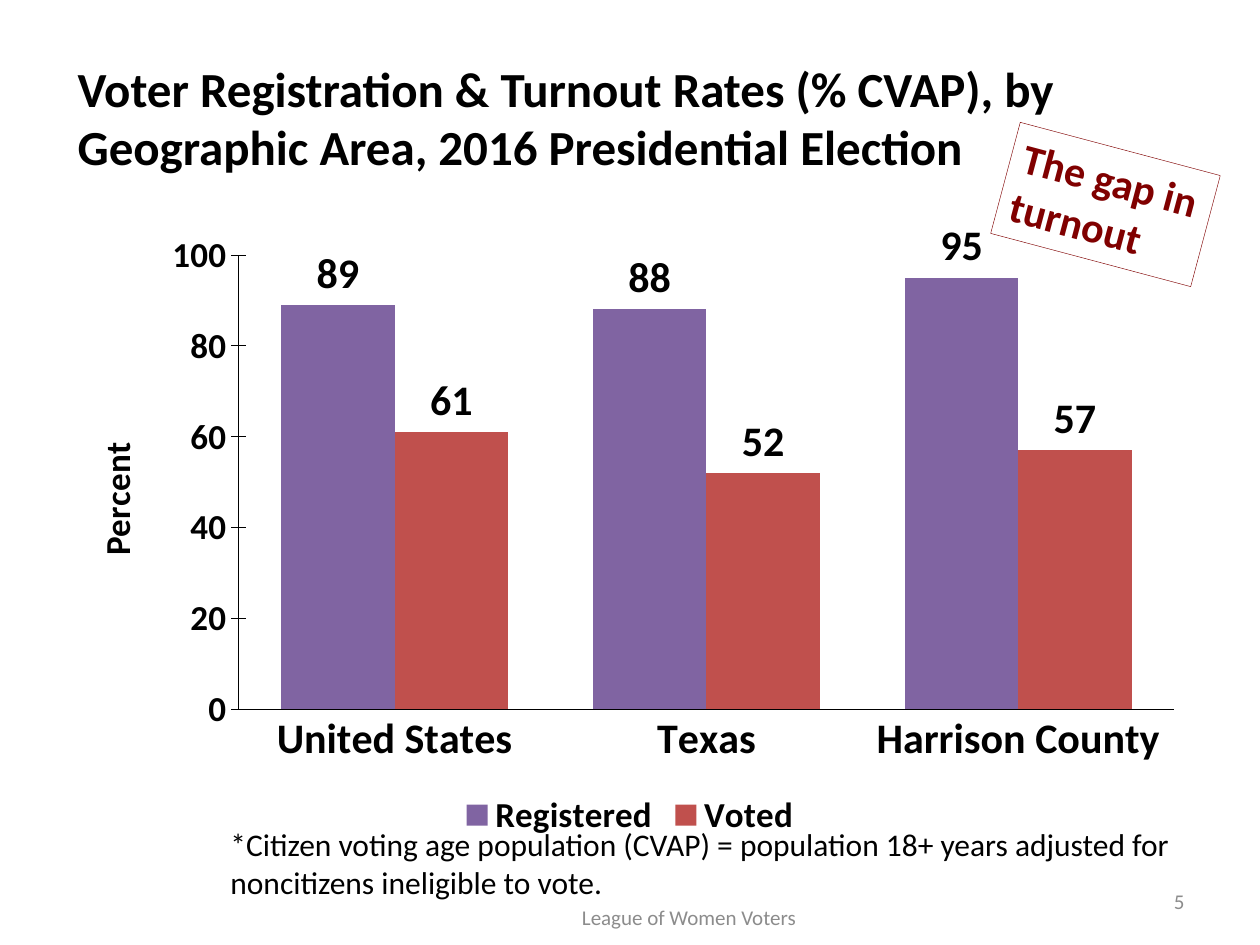
"""Builds a slide on voter registration and turnout rates."""
import dataclasses

import pptx
import pptx.chart.data
import pptx.dml.color
import pptx.enum.chart
import pptx.enum.shapes
import pptx.enum.text
import pptx.oxml
import pptx.oxml.ns
import pptx.util

RGBColor = pptx.dml.color.RGBColor
Align = pptx.enum.text.PP_ALIGN
Anchor = pptx.enum.text.MSO_ANCHOR
Pt = pptx.util.Pt

PX = 914400 / 126
FONT = "Calibri"
BLACK = RGBColor(0, 0, 0)
GREY = RGBColor(0x8C, 0x8C, 0x8C)
MAROON = RGBColor(0x80, 0, 0)
PURPLE = RGBColor(0x80, 0x64, 0xA2)
RED = RGBColor(0xC0, 0x50, 0x4D)


@dataclasses.dataclass
class Box:
    left: int
    top: int
    width: int
    height: int

    def emu(self) -> list[int]:
        return [round(v * PX) for v in dataclasses.astuple(self)]


@dataclasses.dataclass
class Label:
    box: Box
    lines: list[str]
    size: int
    color: RGBColor
    align: Align = Align.LEFT
    anchor: Anchor = Anchor.TOP
    bold: bool = False
    wrap: bool = True


@dataclasses.dataclass
class Series:
    name: str
    values: list[int]
    color: RGBColor


TITLE = Label(
    Box(65, 38, 1131, 158),
    ["Voter Registration & Turnout Rates (% CVAP), by Geographic Area, 2016 Presidential Election"],
    28, BLACK, anchor=Anchor.MIDDLE, bold=True)
CALLOUT = Label(Box(1002, 147, 207, 115), ["The gap in", "turnout"], 24, MAROON,
                bold=True, wrap=False)
LABELS = [
    Label(Box(903, 876, 294, 50), ["5"], 12, GREY, Align.RIGHT, Anchor.MIDDLE),
    Label(Box(464, 892, 450, 50), ["League of Women Voters"], 12, GREY,
          Align.CENTER, Anchor.MIDDLE),
    Label(Box(218, 819, 980, 89),
          ["*Citizen voting age population (CVAP) = population 18+ years adjusted for",
           "noncitizens ineligible to vote."], 18, BLACK, wrap=False),
]
CHART_BOX = Box(63, 220, 1134, 624)
PLOT_BOX = Box(239, 255, 935, 454)
AREAS = ["United States", "Texas", "Harrison County"]
SERIES = [
    Series("Registered", [89, 88, 95], PURPLE),
    Series("Voted", [61, 52, 57], RED),
]


def set_font(font, size: int, color: RGBColor, bold: bool) -> None:
    """Apply the slide typeface with the given size, colour and weight."""
    font.name, font.size, font.bold = FONT, Pt(size), bold
    font.color.rgb = color


def write(s, label: Label) -> None:
    """Place a shape and fill it with the label's paragraphs."""
    s.left, s.top, s.width, s.height = label.box.emu()
    tf = s.text_frame
    tf.text = "\n".join(label.lines)
    tf.word_wrap = label.wrap
    tf.auto_size = pptx.enum.text.MSO_AUTO_SIZE.NONE
    tf.vertical_anchor = label.anchor
    for p in tf.paragraphs:
        p.alignment = label.align
        set_font(p.font, label.size, label.color, label.bold)


def lay_out_plot(chart) -> None:
    """Pin the inner plot area to its box within the chart."""
    parts = {
        "x": (PLOT_BOX.left - CHART_BOX.left) / CHART_BOX.width,
        "y": (PLOT_BOX.top - CHART_BOX.top) / CHART_BOX.height,
        "w": PLOT_BOX.width / CHART_BOX.width,
        "h": PLOT_BOX.height / CHART_BOX.height,
    }
    modes = "".join(f'<c:{k}Mode val="edge"/>' for k in "xy")
    sizes = "".join(f'<c:{k} val="{v:.3f}"/>' for k, v in parts.items())
    layout = pptx.oxml.parse_xml(
        f'<c:layout {pptx.oxml.ns.nsdecls("c")}><c:manualLayout>'
        f'<c:layoutTarget val="inner"/>{modes}{sizes}</c:manualLayout></c:layout>')
    area = chart.plots[0]._element.getparent()
    for old in area.findall(pptx.oxml.ns.qn("c:layout")):
        area.remove(old)
    area.insert(0, layout)


def style_axis(axis, size: int, tick) -> None:
    """Give an axis its labels, tick marks and thin black line."""
    axis.has_major_gridlines = False
    axis.major_tick_mark = tick
    axis.minor_tick_mark = pptx.enum.chart.XL_TICK_MARK.NONE
    axis.format.line.color.rgb = BLACK
    axis.format.line.width = Pt(0.25)
    set_font(axis.tick_labels.font, size, BLACK, True)


def add_rates_chart(sp) -> None:
    """Add the clustered columns of registration and turnout."""
    data = pptx.chart.data.CategoryChartData(number_format="0")
    data.categories = AREAS
    for series in SERIES:
        data.add_series(series.name, series.values)
    kind = pptx.enum.chart.XL_CHART_TYPE.COLUMN_CLUSTERED
    chart = sp.add_chart(kind, *CHART_BOX.emu(), data).chart
    set_font(chart.font, 18, BLACK, False)
    chart.has_title = False
    chart.has_legend = True
    chart.legend.position = pptx.enum.chart.XL_LEGEND_POSITION.BOTTOM
    chart.legend.include_in_layout = False
    set_font(chart.legend.font, 20, BLACK, True)

    ticks = pptx.enum.chart.XL_TICK_MARK
    style_axis(chart.category_axis, 24, ticks.NONE)
    axis = chart.value_axis
    style_axis(axis, 20, ticks.CROSS)
    axis.minimum_scale, axis.maximum_scale, axis.major_unit = 0, 100, 20
    axis.tick_labels.number_format = "0"
    axis.tick_labels.number_format_is_linked = False
    tf = axis.axis_title.text_frame
    tf.text = "Percent"
    set_font(tf.paragraphs[0].font, 20, BLACK, True)

    plot = chart.plots[0]
    plot.gap_width, plot.overlap, plot.vary_by_categories = 75, 0, False
    for drawn, series in zip(plot.series, SERIES):
        drawn.format.fill.solid()
        drawn.format.fill.fore_color.rgb = series.color
        labels = drawn.data_labels
        labels.show_value = True
        labels.number_format = "0"
        labels.number_format_is_linked = False
        labels.position = pptx.enum.chart.XL_LABEL_POSITION.OUTSIDE_END
        set_font(labels.font, 24, BLACK, True)
    lay_out_plot(chart)


def add_callout(sp) -> None:
    """Add the tilted, outlined note."""
    s = sp.add_shape(pptx.enum.shapes.MSO_SHAPE.RECTANGLE, *CALLOUT.box.emu())
    s.shadow.inherit = False
    s.fill.background()
    s.line.color.rgb = MAROON
    s.line.width = Pt(0.25)
    s.rotation = 14.9
    write(s, CALLOUT)


def main() -> None:
    """Build and save the slide."""
    prs = pptx.Presentation()
    prs.slide_width, prs.slide_height = pptx.util.Inches(10), pptx.util.Inches(7.5)
    slide = prs.slides.add_slide(prs.slide_layouts[5])
    sp = slide.shapes
    write(sp.title, TITLE)
    add_rates_chart(sp)
    add_callout(sp)
    for label in LABELS:
        write(sp.add_textbox(*label.box.emu()), label)
    prs.save("out.pptx")


if __name__ == "__main__":
    main()
